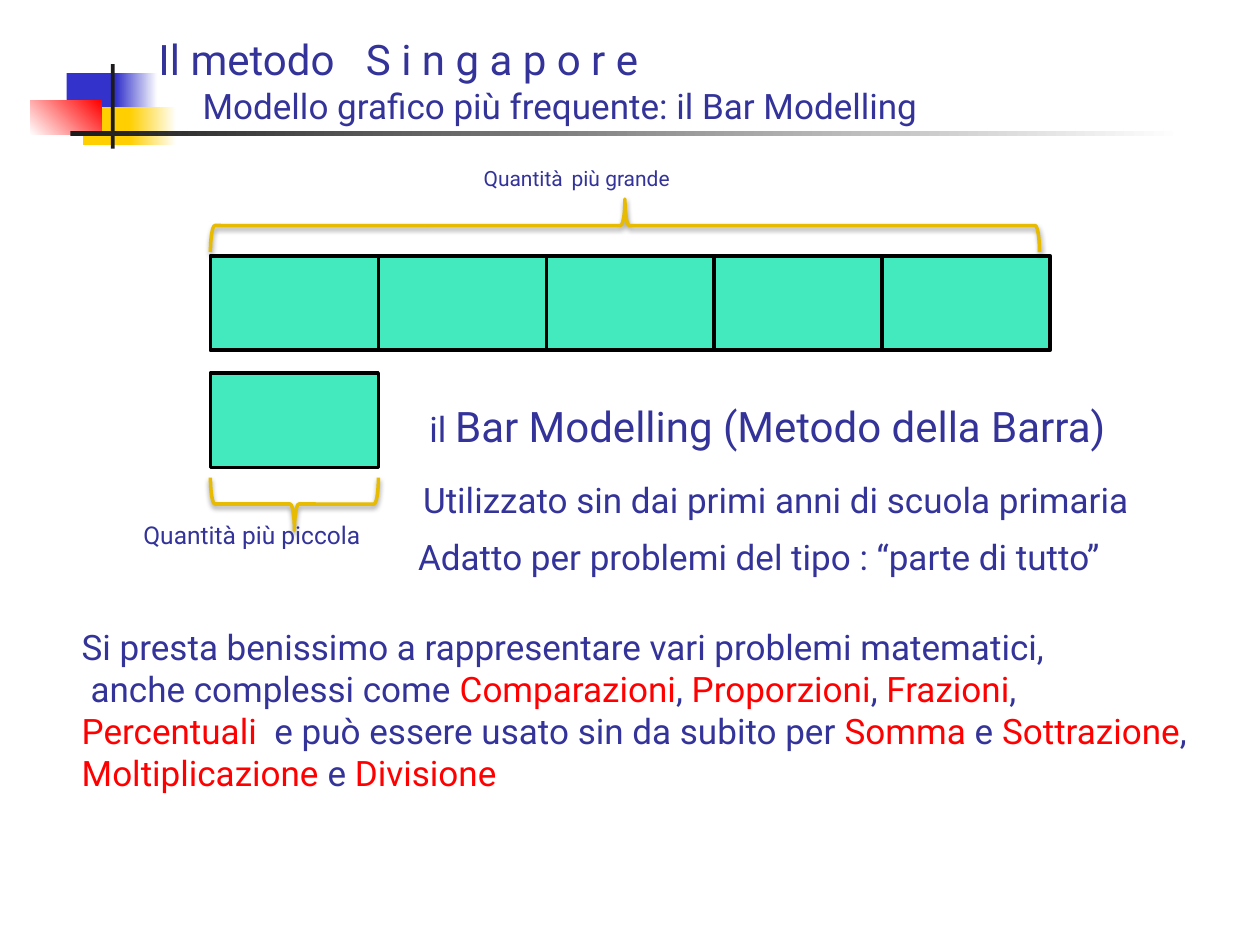
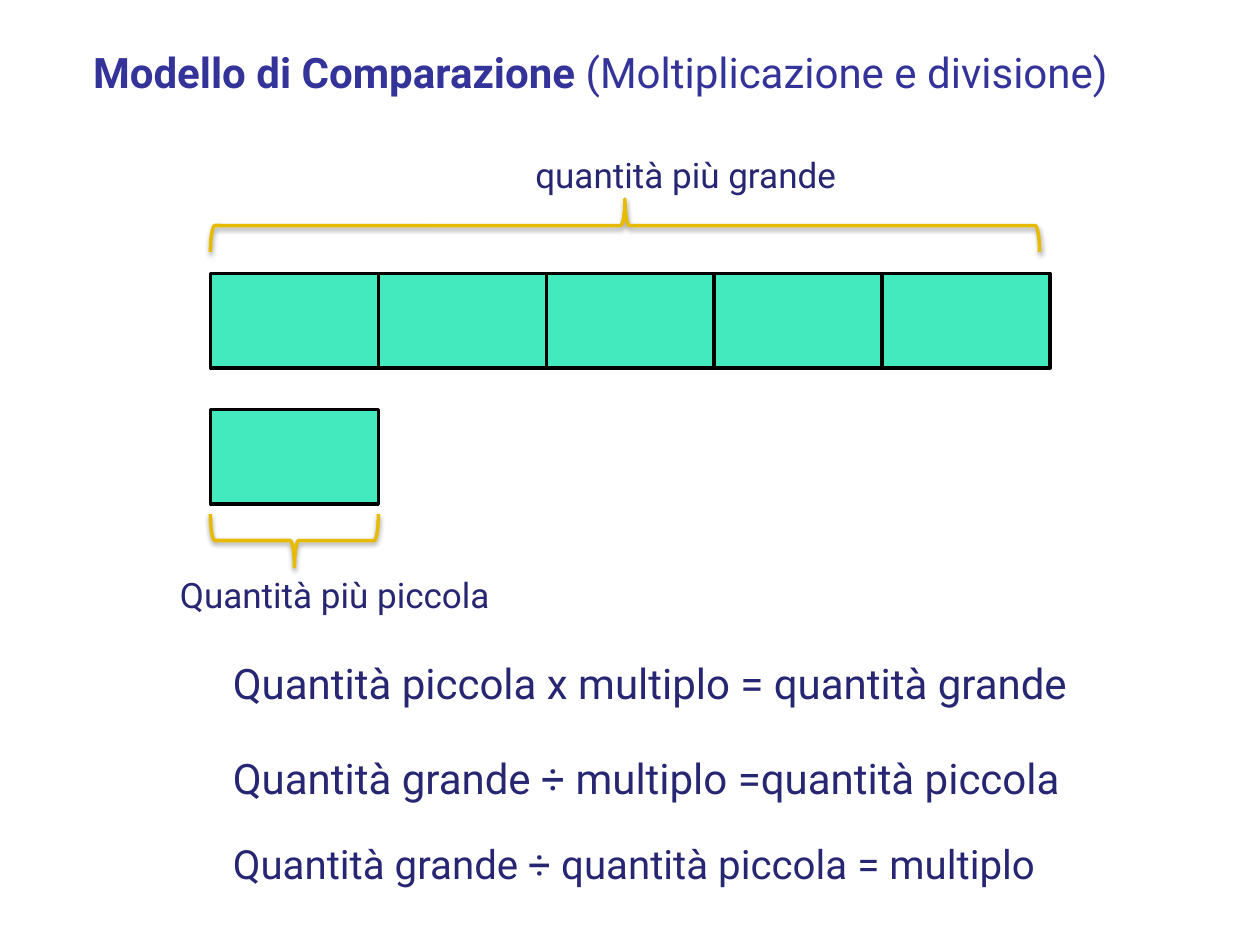
from lxml import etree
from pptx import Presentation
from pptx.dml.color import RGBColor
from pptx.enum.shapes import MSO_SHAPE
from pptx.enum.text import MSO_ANCHOR, PP_ALIGN
from pptx.oxml.ns import qn
from pptx.util import Inches, Pt

RECT, BRACE = MSO_SHAPE.RECTANGLE, MSO_SHAPE.RIGHT_BRACE
TOP, BOTTOM = MSO_ANCHOR.TOP, MSO_ANCHOR.BOTTOM
LEFT, CENTER = PP_ALIGN.LEFT, PP_ALIGN.CENTER

# Shared style
FONT = "Roboto"
BLUE, NAVY, RED = "333399", "262673", "FF0000"
MINT, BLACK, GOLD, WHITE = "00E4A8", "000000", "E7BB01", "FFFFFF"
INK, SUN, SKY = "1C1C1C", "FFCF01", "3333CC"

# Shared bar model
BAR_X, CELL_W, CELL_H, CELLS = 1.67, 1.333, 0.75, 5
BRACE_H, BRACE_Y, BRACE_W = 0.42, 1.79, 6.58
BRACE_GAP = 0.29

# Title ornament: left, top, width, height, fill (or start, end, angle)
ORNAMENT = [
    (0.53, 0.58, 0.44, 0.3, (SKY,)),
    (0.92, 0.58, 0.33, 0.3, (SKY, WHITE, 0)),
    (0.66, 0.85, 0.43, 0.3, (SUN,)),
    (1.03, 0.85, 0.37, 0.3, (SUN, WHITE, 0)),
    (0.24, 0.8, 0.57, 0.27, (WHITE, RED, 45)),
    (0.88, 0.51, 0.03, 0.67, (INK,)),
    (0.56, 1.04, 8.83, 0.04, (INK, WHITE, 0)),
]

# Runs that differ from their paragraph carry a dict of changes
HOT = {"color": RED}

# Text: box, colour, anchor, alignment, paragraphs (size, indent, runs)
SLIDES = [
    {
        "rows": (2.03, 2.96),
        "ornament": ORNAMENT,
        "texts": [
            ((3.74, 1.15, 3.36, 0.44), BLUE, TOP, LEFT, [
                (12, 0, ["Quantità", (" ", {"size": 20}), "più grande"])]),
            ((1.04, 4.08, 3.33, 0.34), BLUE, TOP, LEFT, [
                (14, 0, ["Quantità più piccola"])]),
            ((1.16, 0, 8.4, 1.05), BLUE, BOTTOM, LEFT, [
                (24, 0, ["Il metodo", (" ", {"gap": 12}), "S i n g a p o r e"]),
                (20, 0.35, ["Modello grafico più frequente: il Bar Modelling"])]),
            ((3.31, 3.29, 5.63, 0.34), BLUE, BOTTOM, LEFT, [
                (24, 0, [("il ", {"size": 20}),
                         "Bar Modelling (Metodo della Barra)"])]),
            ((3.26, 3.9, 5.84, 0.28), BLUE, BOTTOM, LEFT, [
                (20, 0, ["Utilizzato sin dai primi anni di scuola primaria"])]),
            ((3.22, 4.28, 6, 0.35), BLUE, BOTTOM, LEFT, [
                (20, 0, ["Adatto per problemi del tipo : “parte di tutto”"])]),
            ((0.55, 6.04, 8.99, 0.31), BLUE, BOTTOM, LEFT, [
                (20, 0, ["Si presta benissimo a rappresentare vari "
                         "problemi matematici,"]),
                (20, 0.07, [
                    "anche complessi come ", ("Comparazioni", HOT), ", ",
                    ("Proporzioni", HOT), ", ", ("Frazioni", HOT), ", ",
                    ("Percentuali", HOT), (" ", {"gap": 5}),
                    "e può essere usato sin da subito per ",
                    ("Somma", HOT), " e ", ("Sottrazione", HOT), ", ",
                    ("Moltiplicazione", HOT), " e ", ("Divisione", HOT)])]),
        ],
    },
    {
        "rows": (2.17, 3.25),
        "ornament": [],
        "texts": [
            ((4.15, 1.17, 3.1, 0.44), NAVY, TOP, LEFT, [
                (20, 0, ["quantità più grande"])]),
            ((1.33, 4.5, 3.33, 0.44), NAVY, TOP, LEFT, [
                (20, 0, ["Quantità più piccola"])]),
            ((1.75, 5.17, 7.47, 0.5), NAVY, TOP, LEFT, [
                (24, 0, ["Quantità piccola x multiplo = quantità grande"])]),
            ((1.75, 5.92, 7.47, 0.5), NAVY, TOP, LEFT, [
                (24, 0, ["Quantità grande ÷ multiplo =quantità piccola"])]),
            ((1.75, 6.61, 7.47, 0.5), NAVY, TOP, LEFT, [
                (23, 0, ["Quantità grande ÷ quantità piccola = multiplo"])]),
            ((0.35, 0.32, 8.83, 0.51), BLUE, TOP, CENTER, [
                (24, 0, [("Modello di Comparazione ", {"bold": True}),
                         "(Moltiplicazione e divisione)"])]),
        ],
    },
]


def rgb(code):
    return RGBColor.from_string(code)


def place(box):
    return [Inches(n) for n in box]


def child(node, tag, **attrs):
    return etree.SubElement(node, qn(tag), {k: str(v) for k, v in attrs.items()})


def add_cell(slide, x, y):
    cell = slide.shapes.add_shape(RECT, *place((x, y, CELL_W, CELL_H)))
    cell.shadow.inherit = False
    cell.fill.solid()
    cell.fill.fore_color.rgb = rgb(MINT)
    tint = cell.fill._xPr.find(qn("a:solidFill"))[0]
    child(tint, "a:alpha", val=74000)
    cell.line.color.rgb = rgb(BLACK)
    cell.line.width = Pt(2)


def add_brace(slide, mid_x, mid_y, span, turn):
    # The brace is upright before it turns about its centre
    box = (mid_x - BRACE_H / 2, mid_y - span / 2, BRACE_H, span)
    brace = slide.shapes.add_shape(BRACE, *place(box))
    brace.rotation = turn
    brace.fill.background()
    brace.line.color.rgb = rgb(GOLD)
    brace.line.width = Pt(2)
    brace.shadow.inherit = False
    effects = brace._element.spPr.find(qn("a:effectLst"))
    shade = child(effects, "a:outerShdw", blurRad=Pt(3.1), dist=Pt(1.6),
                  dir=5400000, rotWithShape=0)
    child(child(shade, "a:srgbClr", val=BLACK), "a:alpha", val=38000)


def add_model(slide, rows):
    top, low = rows
    for i in range(CELLS):
        add_cell(slide, BAR_X + i * CELL_W, top)
    add_cell(slide, BAR_X, low)
    add_brace(slide, BAR_X + BRACE_W / 2, BRACE_Y, BRACE_W, 270)
    add_brace(slide, BAR_X + CELL_W / 2, low + CELL_H + BRACE_GAP, CELL_W, 90)


def add_ornament(slide, parts):
    group = slide.shapes.add_group_shape()
    for *box, paint in parts:
        part = group.shapes.add_shape(RECT, *place(box))
        part.shadow.inherit = False
        part.line.fill.background()
        if len(paint) == 1:
            part.fill.solid()
            part.fill.fore_color.rgb = rgb(paint[0])
            continue
        *ends, angle = paint
        part.fill.gradient()
        part.fill.gradient_angle = angle
        for stop, code in zip(part.fill.gradient_stops, ends):
            stop.color.rgb = rgb(code)


def add_run(para, text, size=None, color=None, bold=None, gap=None):
    run = para.add_run()
    run.text = text
    if size:
        run.font.size = Pt(size)
    if color:
        run.font.color.rgb = rgb(color)
    if bold:
        run.font.bold = True
    if gap:
        run.font._element.set("spc", str(gap * 100))


def add_text(slide, box, color, anchor, align, paras):
    frame = slide.shapes.add_textbox(*place(box)).text_frame
    frame.word_wrap = True
    frame.vertical_anchor = anchor
    for i, (size, indent, runs) in enumerate(paras):
        para = frame.add_paragraph() if i else frame.paragraphs[0]
        para.alignment = align
        para.font.name = FONT
        para.font.size = Pt(size)
        para.font.color.rgb = rgb(color)
        if indent:
            para._p.get_or_add_pPr().set("indent", str(Inches(indent)))
        for run in runs:
            text, changes = (run, {}) if isinstance(run, str) else run
            add_run(para, text, **changes)


def main():
    deck = Presentation()
    deck.slide_width, deck.slide_height = Inches(10), Inches(7.5)
    for page in SLIDES:
        slide = deck.slides.add_slide(deck.slide_layouts[6])
        add_model(slide, page["rows"])
        if page["ornament"]:
            add_ornament(slide, page["ornament"])
        for item in page["texts"]:
            add_text(slide, *item)
    deck.save("out.pptx")


if __name__ == "__main__":
    main()
